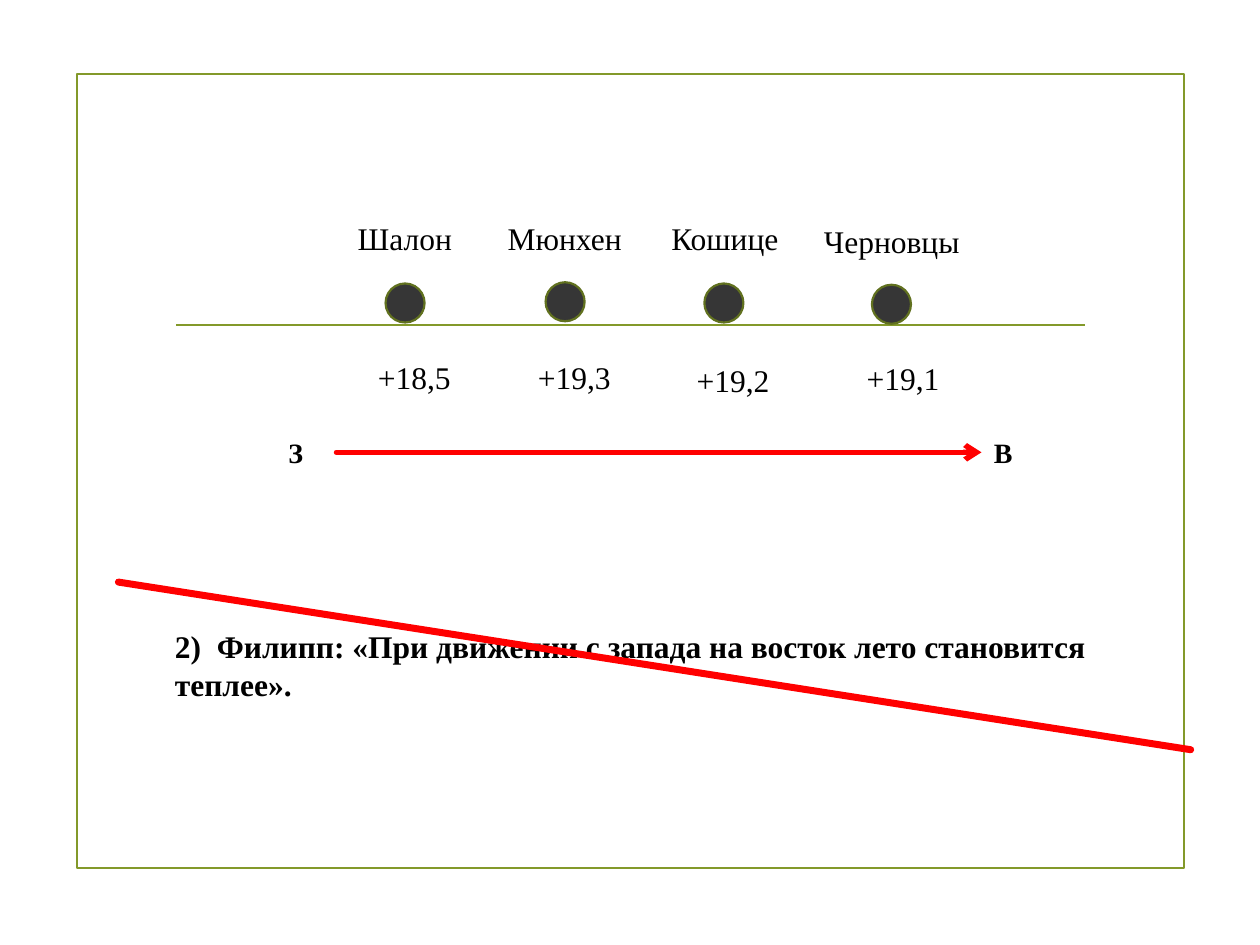
from typing import NamedTuple

from lxml.etree import SubElement
from pptx import Presentation
from pptx.dml.color import RGBColor
from pptx.enum.shapes import MSO_CONNECTOR, MSO_SHAPE
from pptx.enum.text import MSO_AUTO_SIZE
from pptx.oxml.ns import qn
from pptx.util import Inches, Pt

GREEN = "83992A"
DARK_GREEN = "61711F"
CHARCOAL = "363636"
RED = "FF0000"
BLACK = "000000"
CIRCLE_SIZE = 0.31
LABEL_HEIGHT = 0.4
TEMPERATURE_WIDTH = 0.79


class City(NamedTuple):
    name: str
    name_left: float
    name_top: float
    name_width: float
    circle_left: float
    circle_top: float
    temperature: str
    temperature_left: float
    temperature_top: float


class Direction(NamedTuple):
    letter: str
    left: float
    width: float


CITIES = [
    City("Шалон", 2.74, 1.69, 0.95, 3.06, 2.25, "+18,5", 2.9, 2.79),
    City("Мюнхен", 3.93, 1.69, 1.12, 4.33, 2.24, "+19,3", 4.17, 2.79),
    City("Кошице", 5.23, 1.69, 1.06, 5.59, 2.25, "+19,2", 5.43, 2.82),
    City("Черновцы", 6.44, 1.71, 1.29, 6.92, 2.26, "+19,1", 6.78, 2.8),
]
DIRECTIONS = [Direction("З", 2.19, 0.32), Direction("В", 7.79, 0.35)]
CLAIM = "2)  Филипп: «При движении с запада на восток лето становится теплее»."


def color(value: str) -> RGBColor:
    return RGBColor.from_string(value)


def add_outlined_shape(slide, kind, left: float, top: float, width: float,
                       height: float, line: str, fill: str | None = None) -> None:
    shape = slide.shapes.add_shape(
        kind, Inches(left), Inches(top), Inches(width), Inches(height))
    shape.shadow.inherit = False
    if fill is None:
        shape.fill.background()
    else:
        shape.fill.solid()
        shape.fill.fore_color.rgb = color(fill)
    shape.line.color.rgb = color(line)
    shape.line.width = Pt(1.25)


def add_line(slide, start: tuple[float, float], end: tuple[float, float],
             line: str, width: float, cap: str = "flat", arrow: bool = False) -> None:
    connector = slide.shapes.add_connector(
        MSO_CONNECTOR.STRAIGHT, *map(Inches, start + end))
    connector.line.color.rgb = color(line)
    connector.line.width = Pt(width)
    outline = connector.line._get_or_add_ln()
    outline.set("cap", cap)
    if arrow:
        SubElement(outline, qn("a:tailEnd"), type="arrow")
    SubElement(connector._element.spPr, qn("a:effectLst"))


def add_text(slide, text: str, left: float, top: float, width: float, height: float,
             size: float = 18, bold: bool = False, wrap: bool = False) -> None:
    box = slide.shapes.add_textbox(
        Inches(left), Inches(top), Inches(width), Inches(height))
    frame = box.text_frame
    frame.word_wrap = wrap
    frame.auto_size = MSO_AUTO_SIZE.SHAPE_TO_FIT_TEXT
    paragraph = frame.paragraphs[0]
    run = paragraph.add_run()
    run.text = text
    formats = {"name": "Times New Roman", "size": Pt(size), "bold": bold}
    for attribute, value in formats.items():
        setattr(run.font, attribute, value)
    run.font.color.rgb = color(BLACK)


def add_city(slide, city: City) -> None:
    add_outlined_shape(slide, MSO_SHAPE.OVAL, city.circle_left, city.circle_top,
                       CIRCLE_SIZE, CIRCLE_SIZE, DARK_GREEN, CHARCOAL)
    add_text(slide, city.name, city.name_left, city.name_top,
             city.name_width, LABEL_HEIGHT)
    add_text(slide, city.temperature, city.temperature_left, city.temperature_top,
             TEMPERATURE_WIDTH, LABEL_HEIGHT)


def main() -> None:
    presentation = Presentation()
    presentation.slide_width = Inches(10)
    presentation.slide_height = Inches(7.5)
    slide = presentation.slides.add_slide(presentation.slide_layouts[6])

    add_outlined_shape(slide, MSO_SHAPE.RECTANGLE, 0.61, 0.59, 8.79, 6.3, GREEN)
    add_line(slide, (1.4, 2.58), (8.61, 2.58), GREEN, 1.25)
    for city in CITIES:
        add_city(slide, city)
    add_line(slide, (2.67, 3.59), (7.79, 3.59), RED, 3, cap="rnd", arrow=True)
    for direction in DIRECTIONS:
        add_text(slide, direction.letter, direction.left, 3.41,
                 direction.width, 0.37, size=16, bold=True)
    add_text(slide, CLAIM, 1.29, 4.93, 7.8, 0.71, bold=True, wrap=True)
    add_line(slide, (0.94, 4.62), (9.45, 5.95), RED, 4, cap="rnd")

    presentation.save("out.pptx")


if __name__ == "__main__":
    main()
